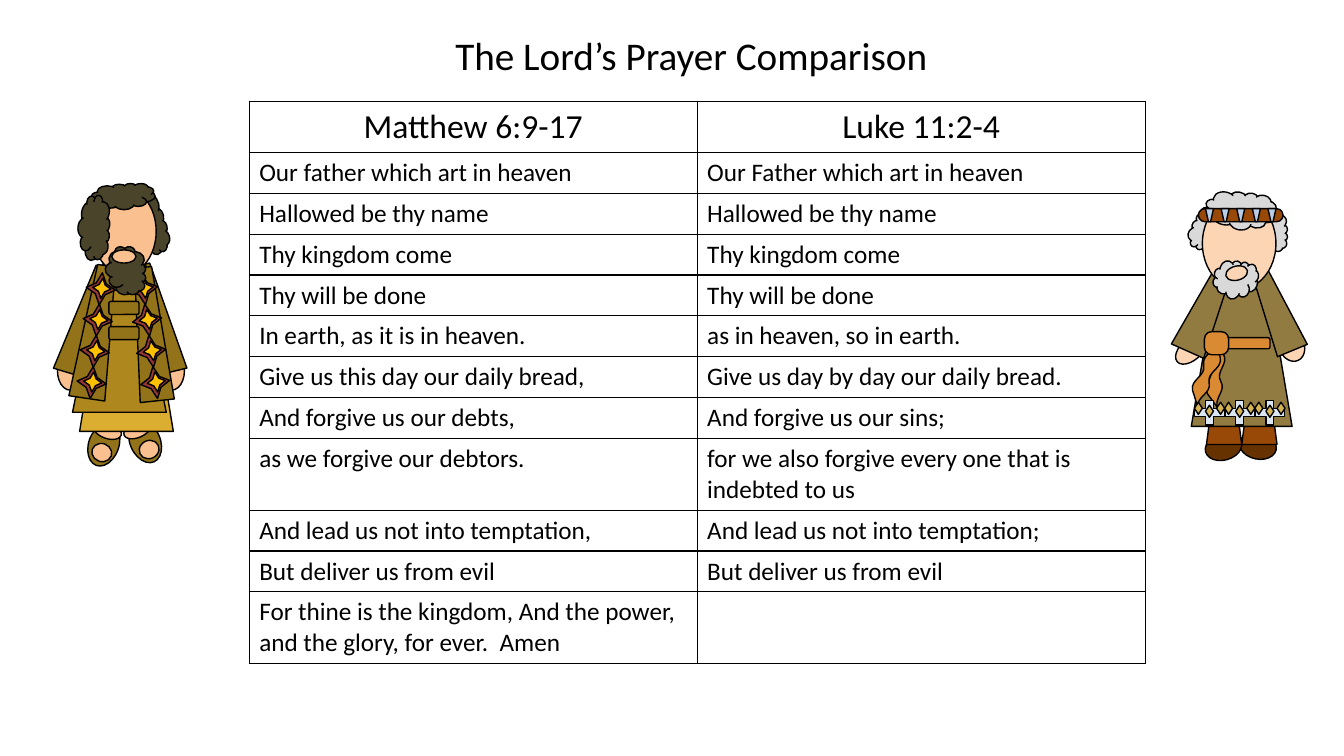
"""Build a slide that compares the Lord's Prayer in Matthew and Luke."""
from dataclasses import dataclass

from lxml.etree import SubElement
from pptx import Presentation
from pptx.dml.color import RGBColor
from pptx.enum.shapes import MSO_SHAPE as Kind
from pptx.enum.text import MSO_ANCHOR as Anchor, PP_ALIGN as Align
from pptx.oxml.ns import qn
from pptx.slide import Slide
from pptx.table import _Cell as Cell
from pptx.text.text import TextFrame
from pptx.util import Cm, Pt

FONT = "Calibri"
INK = {
    "black": "000000", "grey": "D9D9D9", "boot": "663300", "pale": "FCD5B5",
    "rust": "984807", "robe": "927B40", "sky": "B9CDE5", "sash": "D98A33",
    "ice": "DCE6F2", "gem": "D5B353", "hair": "4A452A", "coat": "937319",
    "skin": "FAC090", "hem": "DBAE31", "tunic": "AE881E", "wine": "953735",
    "gold": "FFC000",
}
ROWS = [
    ("Matthew 6:9-17", "Luke 11:2-4"),
    ("Our father which art in heaven", "Our Father which art in heaven"),
    ("Hallowed be thy name", "Hallowed be thy name"),
    ("Thy kingdom come", "Thy kingdom come"),
    ("Thy will be done", "Thy will be done"),
    ("In earth, as it is in heaven.", "as in heaven, so in earth."),
    ("Give us this day our daily bread,", "Give us day by day our daily bread."),
    ("And forgive us our debts,", "And forgive us our sins;"),
    ("as we forgive our debtors.",
     "for we also forgive every one that is indebted to us"),
    ("And lead us not into temptation,", "And lead us not into temptation;"),
    ("But deliver us from evil", "But deliver us from evil"),
    ("For thine is the kingdom, And the power,\n"
     "and the glory, for ever.  Amen", ""),
]
TALL = {0: 1.29, 8: 1.8, 11: 1.8}


@dataclass(frozen=True)
class Part:
    """One filled shape of a figure, with its box in inches."""
    kind: Kind
    ink: str
    left: float
    top: float
    wide: float
    high: float
    turn: float = 0
    bends: tuple[float, ...] = ()


def color(name: str) -> RGBColor:
    """Look up a colour by name."""
    return RGBColor.from_string(INK[name])


def cm(inch: float) -> Cm:
    """Turn inches into a length in centimetres."""
    return Cm(inch * 2.54)


def style(frame: TextFrame, size: int, align: Align) -> None:
    """Format every paragraph and run of a text frame."""
    for para in frame.paragraphs:
        para.alignment = align
        for run in para.runs:
            run.font.name, run.font.size = FONT, Pt(size)
            run.font.color.rgb = color("black")


def border(cell: Cell) -> None:
    """Draw a thin black line on all sides of a cell."""
    props = cell._tc.get_or_add_tcPr()
    for spot, side in enumerate(("a:lnL", "a:lnR", "a:lnT", "a:lnB")):
        line = props.makeelement(qn(side), {"w": str(Pt(1))})
        fill = SubElement(line, qn("a:solidFill"))
        SubElement(fill, qn("a:srgbClr"), val=INK["black"])
        props.insert(spot, line)


def add_title(slide: Slide) -> None:
    """Place and format the title."""
    title = slide.shapes.title
    title.left, title.top = Cm(11.22), Cm(0.66)
    title.width, title.height = Cm(15.67), Cm(1.45)
    frame = title.text_frame
    frame.text = "The Lord’s Prayer Comparison"
    frame.word_wrap = True
    frame.vertical_anchor = Anchor.TOP
    style(frame, 28, Align.LEFT)


def add_verses(slide: Slide) -> None:
    """Draw the table of verses."""
    table = slide.shapes.add_table(
        len(ROWS), 2, Cm(6.28), Cm(2.55), Cm(22.58), Cm(14.1)).table
    table.first_row = table.horz_banding = False
    for row, pair in enumerate(ROWS):
        table.rows[row].height = Cm(TALL.get(row, 1.03))
        for col, words in enumerate(pair):
            cell = table.cell(row, col)
            cell.fill.background()
            border(cell)
            if not words:
                continue
            cell.text_frame.text = words
            if row:
                style(cell.text_frame, 18, Align.LEFT)
            else:
                style(cell.text_frame, 24, Align.CENTER)


def add_figure(slide: Slide, parts: list[Part]) -> None:
    """Draw the parts of a figure as one group."""
    group = slide.shapes.add_group_shape()
    for part in parts:
        shape = group.shapes.add_shape(
            part.kind, cm(part.left), cm(part.top), cm(part.wide), cm(part.high))
        shape.rotation = part.turn
        for spot, bend in enumerate(part.bends):
            shape.adjustments[spot] = bend
        shape.shadow.inherit = False
        shape.fill.solid()
        shape.fill.fore_color.rgb = color(part.ink)
        shape.line.color.rgb = color("black")
        shape.line.width = Pt(1)


def trim(step: int) -> list[Part]:
    """Give one cross and its three gems on the hem."""
    left = 11.8 + 0.3 * step
    gems = [Part(Kind.DIAMOND, "gem", left + dx, top, 0.08, 0.12)
            for dx, top in ((0.16, 4.02), (0.27, 3.99), (0.05, 3.99))]
    return [Part(Kind.MATH_PLUS, "ice", left, 3.93, 0.4, 0.33), *gems]


def star(left: float, top: float, turn: float) -> list[Part]:
    """Give a gold star on a larger wine one."""
    return [Part(Kind.STAR_4_POINT, "wine", left, top, 0.32, 0.29, turn, (0.24,)),
            Part(Kind.STAR_4_POINT, "gold", left + 0.07, top + 0.05,
                 0.2, 0.18, turn, (0.24,))]


def elder() -> list[Part]:
    """List the parts of the grey-haired man, back to front."""
    oval, cloud, trap = Kind.OVAL, Kind.CLOUD, Kind.TRAPEZOID
    bar, wave = Kind.ROUNDED_RECTANGLE, Kind.DOUBLE_WAVE
    return [
        Part(cloud, "grey", 11.74, 2.12, 0.45, 0.29, 306.4),
        Part(cloud, "grey", 12.43, 2.15, 0.41, 0.29, 95.8),
        Part(oval, "boot", 12.35, 4.24, 0.26, 0.37, 102.1),
        Part(oval, "boot", 12.01, 4.25, 0.26, 0.37, 74.5),
        Part(oval, "pale", 11.71, 3.29, 0.21, 0.36, 48.4),
        Part(oval, "pale", 12.69, 3.27, 0.25, 0.32, 337.1),
        *(Part(trap, "rust", left, 3.74, 0.35, 0.67) for left in (12.32, 11.97)),
        Part(trap, "robe", 11.82, 2.75, 1, 1.48),
        Part(trap, "robe", 11.78, 2.67, 0.35, 0.85, 24),
        Part(trap, "robe", 12.5, 2.66, 0.32, 0.85, 337.5),
        Part(oval, "pale", 11.93, 1.96, 0.73, 0.91),
        Part(cloud, "grey", 11.96, 1.9, 0.71, 0.38, 10),
        Part(bar, "rust", 11.89, 2.07, 0.84, 0.13, 0, (0.5,)),
        *(Part(trap, "sky", 11.96 + 0.62 * step / 4, 2.07, 0.08, 0.13, 180, (0.37,))
          for step in range(5)),
        Part(cloud, "grey", 12.04, 2.58, 0.44, 0.39, 16.4),
        Part(oval, "pale", 12.2, 2.6, 0.14, 0.22, 76.1),
        Part(bar, "sash", 11.99, 3.35, 0.61, 0.11),
        *(Part(wave, "sash", left, 3.63, 0.68, 0.16, turn, (0.13, -0.1))
          for left, turn in ((11.72, 275.3), (11.63, 293.9))),
        Part(bar, "sash", 11.95, 3.29, 0.24, 0.23, 0, (0.32,)),
        *(part for step in range(3) for part in trim(step)),
    ]


def younger() -> list[Part]:
    """List the parts of the dark-haired man, back to front."""
    oval, cloud, trap = Kind.OVAL, Kind.CLOUD, Kind.TRAPEZOID
    bar = Kind.ROUNDED_RECTANGLE
    feet = ((19.6, 0.88, 4.19, 0.91, 4.4, 0.92, 4.19),
            (336.1, 1.29, 4.16, 1.38, 4.37, 1.22, 4.18))
    return [
        Part(cloud, "hair", 1.16, 2.05, 0.65, 0.32, 76.4),
        *(part for turn, x, y, toe, low, heel, up in feet for part in (
            Part(oval, "coat", x, y, 0.3, 0.44, turn),
            Part(oval, "skin", toe, low, 0.2, 0.18, turn),
            Part(oval, "skin", heel, up, 0.29, 0.16, turn))),
        *(Part(oval, "skin", left, 3.49, 0.25, 0.38) for left in (1.58, 0.57)),
        Part(trap, "coat", 1.29, 2.62, 0.44, 1.1, 346.2),
        Part(trap, "coat", 0.68, 2.64, 0.44, 1.1, 16.8),
        Part(trap, "hem", 0.79, 2.55, 0.93, 1.73, 0, (0.31,)),
        Part(trap, "tunic", 0.72, 2.62, 0.93, 1.47, 0, (0.32,)),
        Part(trap, "coat", 1.32, 2.65, 0.34, 1.33, 353.9),
        Part(trap, "coat", 0.78, 2.63, 0.36, 1.33, 8.5),
        Part(oval, "skin", 0.92, 1.87, 0.63, 0.85),
        *(part for left, slant, turn in ((1.26, 0.04, 81.7), (0.84, -0.03, 95.7))
          for step in range(4)
          for part in star(left + slant * step, 2.72 + 0.31 * step, turn)),
        *(Part(bar, "coat", 1.08, top, 0.3, 0.13) for top in (2.99, 3.24)),
        Part(cloud, "hair", 0.91, 1.82, 0.63, 0.26),
        Part(cloud, "hair", 0.61, 2.1, 0.65, 0.32, 96.7),
        Part(cloud, "hair", 1.01, 2.48, 0.48, 0.41, 96.7),
        Part(oval, "skin", 1.11, 2.48, 0.24, 0.13),
    ]


def main() -> None:
    """Build and save the slide."""
    deck = Presentation()
    deck.slide_width, deck.slide_height = Cm(33.87), Cm(19.05)
    slide = deck.slides.add_slide(deck.slide_layouts[5])
    add_title(slide)
    add_verses(slide)
    add_figure(slide, elder())
    add_figure(slide, younger())
    deck.save("out.pptx")


if __name__ == "__main__":
    main()
